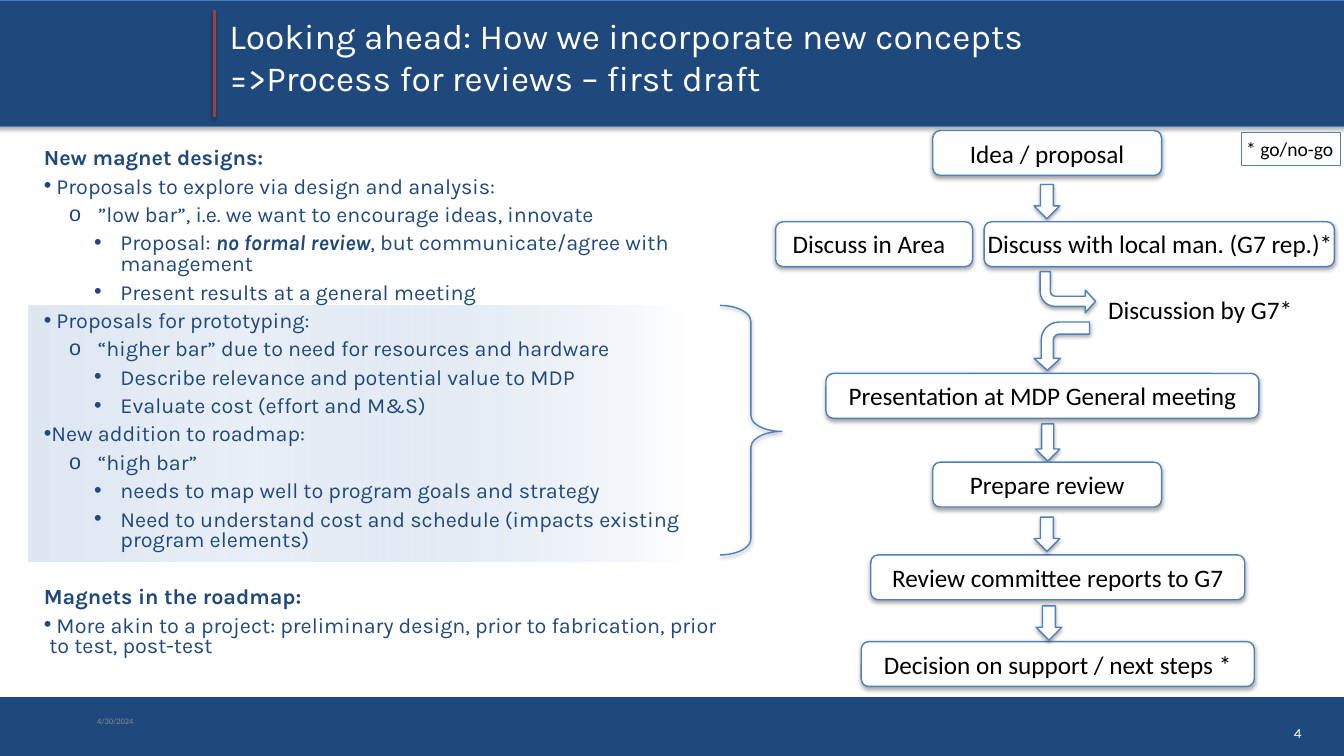
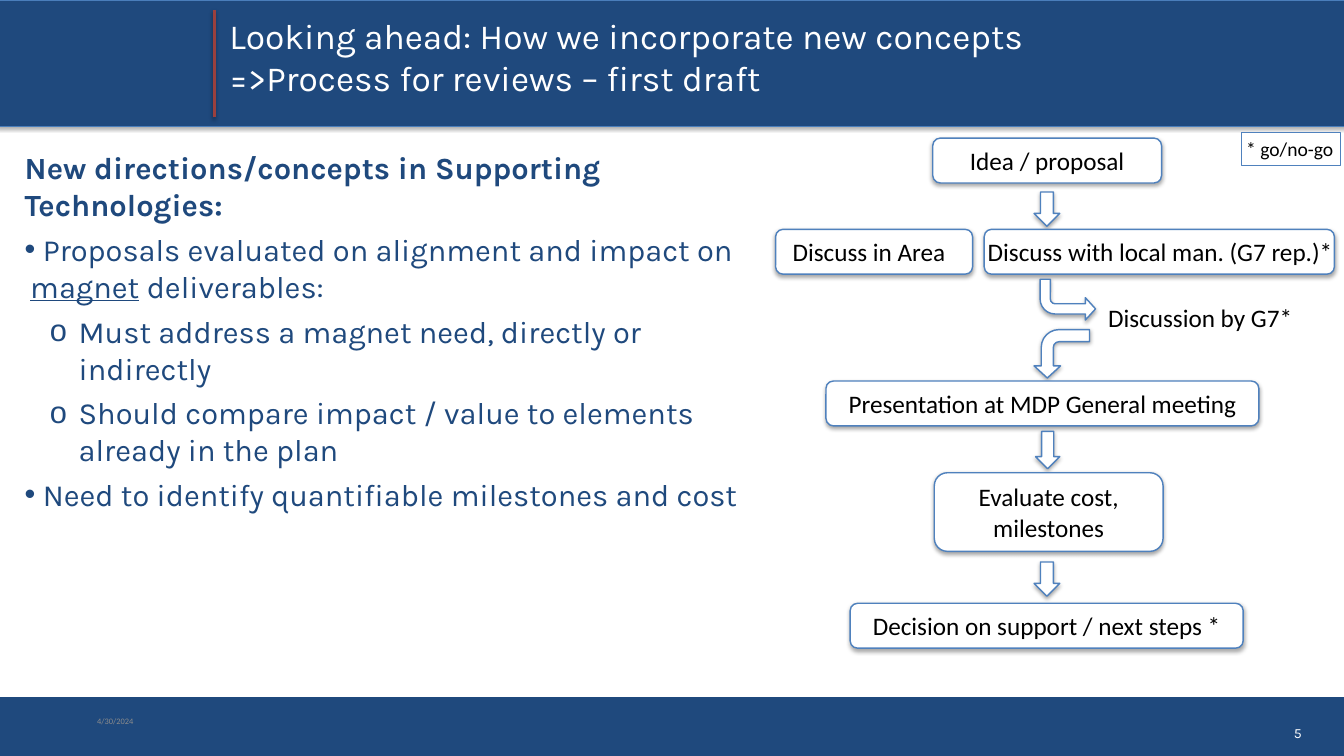
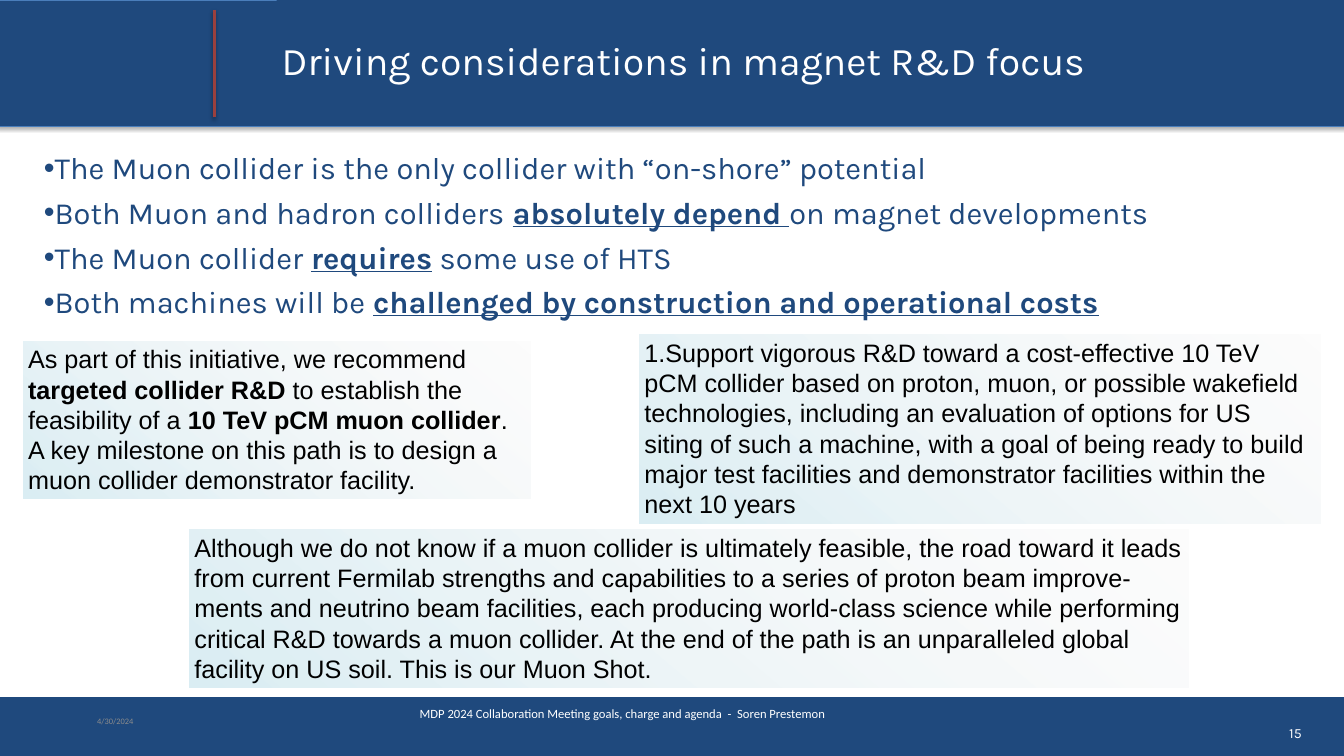
from dataclasses import dataclass
from typing import NamedTuple, Optional

from lxml.etree import SubElement
from pptx import Presentation
from pptx.dml.color import RGBColor
from pptx.enum.shapes import MSO_CONNECTOR, MSO_SHAPE as SHAPE
from pptx.enum.text import MSO_ANCHOR as ANCHOR, MSO_AUTO_SIZE as AUTO_SIZE, PP_ALIGN as ALIGN
from pptx.oxml.ns import qn
from pptx.util import Inches, Pt

NAVY, WHITE, BLACK, GREY = "1F497D", "FFFFFF", "000000", "8C8C8C"
BAND_EDGE, RULE, OUTLINE = "4A7EBB", "9A403E", "4F81BD"
HEAD_FONT, FLOW_FONT, QUOTE_FONT = "Karla", "Calibri", "Arial"
PAD = 0.1
STEP_HEIGHT = 0.89
REVIEW_TITLE = ["Looking ahead: How we incorporate new concepts ",
                "=>Process for reviews – first draft"]


class Box(NamedTuple):
    left: float
    top: float
    width: float
    height: float

    def lengths(self):
        return [Inches(v) for v in self]

    def lower(self, shift: float) -> "Box":
        return self._replace(top=self.top + shift)


class Run(NamedTuple):
    text: str
    bold: bool = False
    italic: bool = False
    underline: bool = False


class Stop(NamedTuple):
    position: int
    color: str
    opacity: int = 100


@dataclass(frozen=True)
class Font:
    name: str
    size: float
    color: str = BLACK


@dataclass(frozen=True)
class Level:
    depth: int = 0
    margin: float = 0
    hanging: float = 0
    bullet: Optional[str] = None


@dataclass(frozen=True)
class Item:
    level: Level
    runs: list
    space_before: float = 11


@dataclass(frozen=True)
class Step:
    text: str
    box: Box


HEADING = Level()
TOPIC = Level(0, 0.11, 0.11, "•")
SUBTOPIC = Level(1, 1.07, 0.57, "o")
DETAIL = Level(2, 1.52, 0.52, "•")

FLOW = Font(FLOW_FONT, 36)
QUOTE = Font(QUOTE_FONT, 36)
HIGHLIGHT_STOPS = [Stop(0, "F6F9FC"), Stop(0, "B0C6E1", 42),
                   Stop(32, "B0C6E1", 27), Stop(93, WHITE)]
QUOTE_STOPS = [Stop(0, "F7F7F7", 32), Stop(100, "DBEEF4")]


def rgb(color: str) -> RGBColor:
    return RGBColor.from_string(color)


def set_effects(s, shadow: int = 0) -> None:
    """Replace the theme shadow by one of the given opacity, or by none."""
    effects = SubElement(s.element.spPr, qn("a:effectLst"))
    if shadow:
        outer = SubElement(effects, qn("a:outerShdw"), blurRad=str(Pt(6)), dist=str(Pt(3)),
                           dir="5400000", rotWithShape="0")
        black = SubElement(outer, qn("a:srgbClr"), val=BLACK)
        SubElement(black, qn("a:alpha"), val=str(shadow * 1000))


def set_gradient(s, stops: list, angle: int) -> None:
    s.fill.gradient()
    s.fill.gradient_angle = -angle % 360
    stop_list = s.element.spPr.find(qn("a:gradFill")).find(qn("a:gsLst"))
    for old in list(stop_list):
        stop_list.remove(old)
    for stop in stops:
        gs = SubElement(stop_list, qn("a:gs"), pos=str(stop.position * 1000))
        color = SubElement(gs, qn("a:srgbClr"), val=stop.color)
        if stop.opacity < 100:
            SubElement(color, qn("a:alpha"), val=str(stop.opacity * 1000))


def add_shape(slide, kind, box: Box, fill: Optional[str] = WHITE, line: Optional[str] = OUTLINE,
              weight: float = 2, shadow: int = 35, adjust=()):
    s = slide.shapes.add_shape(kind, *box.lengths())
    for i, value in enumerate(adjust):
        s.adjustments[i] = value
    if fill:
        s.fill.solid()
        s.fill.fore_color.rgb = rgb(fill)
    else:
        s.fill.background()
    if line:
        s.line.color.rgb = rgb(line)
        s.line.width = Pt(weight)
    else:
        s.line.fill.background()
    set_effects(s, shadow)
    return s


def add_gradient_box(slide, box: Box, stops: list, angle: int):
    s = add_shape(slide, SHAPE.RECTANGLE, box, line=None, shadow=0)
    set_gradient(s, stops, angle)
    return s


def add_runs(p, runs: list, font: Font) -> None:
    for run in runs:
        r = p.add_run()
        r.text = run.text
        f = r.font
        f.name, f.size = font.name, Pt(font.size)
        f.color.rgb = rgb(font.color)
        f.bold, f.italic, f.underline = run.bold, run.italic, run.underline


def setup_frame(s, anchor=ANCHOR.TOP, pad: float = PAD, wrap: bool = True):
    """Set padding, anchor and wrapping, and return the text frame."""
    tf = s.text_frame
    tf.word_wrap = wrap
    tf.auto_size = AUTO_SIZE.NONE if wrap else AUTO_SIZE.SHAPE_TO_FIT_TEXT
    tf.vertical_anchor = anchor
    tf.margin_left = tf.margin_right = Inches(PAD)
    tf.margin_top = tf.margin_bottom = Inches(pad)
    return tf


def write(s, runs: list, font: Font, align=ALIGN.LEFT, anchor=ANCHOR.TOP,
          pad: float = PAD, wrap: bool = True):
    p = setup_frame(s, anchor, pad, wrap).paragraphs[0]
    p.alignment = align
    add_runs(p, runs, font)
    return p


def add_label(slide, text: str, box: Box, font: Font = FLOW, **layout) -> None:
    write(slide.shapes.add_textbox(*box.lengths()), [Run(text)], font, **layout)


def place(s, box: Box) -> None:
    s.left, s.top, s.width, s.height = box.lengths()


def set_title(slide, lines: list, box: Box, size: float) -> None:
    s = slide.shapes.title
    place(s, box)
    s.fill.solid()
    s.fill.fore_color.rgb = rgb(NAVY)
    p = setup_frame(s, ANCHOR.MIDDLE).paragraphs[0]
    p.alignment = ALIGN.LEFT
    for i, line in enumerate(lines):
        if i:
            p.add_line_break()
        add_runs(p, [Run(line)], Font(HEAD_FONT, size, WHITE))


def set_level(p, level: Level) -> None:
    p.level = level.depth
    pPr = p._p.get_or_add_pPr()
    pPr.set("marL", str(Inches(level.margin)))
    pPr.set("indent", str(-Inches(level.hanging)))
    if level.bullet:
        SubElement(pPr, qn("a:buChar"), char=level.bullet)
    else:
        SubElement(pPr, qn("a:buNone"))


def set_body(slide, items: list, box: Box, size: float, line_spacing: float = 1.0) -> None:
    s = slide.placeholders[1]
    place(s, box)
    tf = setup_frame(s)
    for i, item in enumerate(items):
        p = tf.add_paragraph() if i else tf.paragraphs[0]
        set_level(p, item.level)
        p.alignment = ALIGN.LEFT
        p.line_spacing = line_spacing
        p.space_before = Pt(item.space_before if i else 0)
        add_runs(p, item.runs, Font(HEAD_FONT, size, NAVY))


def add_bands_to_layout(slide, layout) -> None:
    """Draw the bands and the red rule, then hand them to the layout all slides use."""
    footer = add_shape(slide, SHAPE.RECTANGLE, Box(-0.04, 13.83, 26.74, 1.19), NAVY, None, shadow=0)
    header = add_shape(slide, SHAPE.RECTANGLE, Box(-0.07, 0, 26.79, 2.5), NAVY, BAND_EDGE, 1)
    rule = slide.shapes.add_connector(MSO_CONNECTOR.STRAIGHT, Inches(4.25), Inches(2.33),
                                      Inches(4.25), Inches(0.2))
    rule.line.color.rgb = rgb(RULE)
    rule.line.width = Pt(4)
    set_effects(rule, 38)
    for s in (footer, header, rule):
        layout.shapes.element.append(s.element)


def add_footer(slide, number: int) -> None:
    add_label(slide, "4/30/2024", Box(1.83, 13.9, 6, 0.8), Font(FLOW_FONT, 12, GREY),
              anchor=ANCHOR.MIDDLE)
    add_label(slide, str(number), Box(25.4, 14.28, 0.53, 0.51), Font(HEAD_FONT, 20, WHITE),
              align=ALIGN.RIGHT, anchor=ANCHOR.MIDDLE, wrap=False)


def add_step(slide, step: Step) -> None:
    s = add_shape(slide, SHAPE.ROUNDED_RECTANGLE, step.box)
    write(s, [Run(step.text)], FLOW, ALIGN.CENTER, ANCHOR.MIDDLE)


def add_down_arrow(slide, left: float, top: float, width: float = 0.51, height: float = 0.68) -> None:
    add_shape(slide, SHAPE.DOWN_ARROW, Box(left, top, width, height))


def add_bent_arrow(slide, box: Box, rotation: int) -> None:
    s = add_shape(slide, SHAPE.BENT_ARROW, box, adjust=(0.25, 0.274, 0.25, 0.366))
    s.rotation = rotation
    s.element.spPr.find(qn("a:xfrm")).set("flipH", "1")


def add_flow_start(slide, shift: float = 0) -> None:
    """Draw the steps both review processes begin with, lowered by shift."""
    add_step(slide, Step("Idea / proposal", Box(18.51, 2.59 + shift, 4.54, STEP_HEIGHT)))
    add_down_arrow(slide, 20.52, 3.66 + shift)
    for left, width in ((19.53, 6.95), (15.39, 3.91)):
        add_shape(slide, SHAPE.ROUNDED_RECTANGLE, Box(left, 4.4 + shift, width, STEP_HEIGHT))
    for text, box in (("Discuss with local man. (G7 rep.)*", Box(19.5, 4.43, 7.09, 0.81)),
                      ("Discuss in Area", Box(15.63, 4.43, 3.47, 0.81)),
                      ("Discussion by G7*", Box(21.89, 5.74, 4.39, 0.81))):
        add_label(slide, text, box.lower(shift))
    add_bent_arrow(slide, Box(20.64, 5.39 + shift, 1.1, 0.81), 180)
    add_bent_arrow(slide, Box(20.59, 6.32 + shift, 0.96, 1.1), 270)
    add_step(slide, Step("Presentation at MDP General meeting",
                         Box(16.39, 7.41 + shift, 8.59, STEP_HEIGHT)))
    add_down_arrow(slide, 20.55, 8.41 + shift, 0.48, 0.74)
    legend = add_shape(slide, SHAPE.RECTANGLE, Box(24.63, 2.62, 1.96, 0.67), None,
                       weight=1, shadow=0)
    write(legend, [Run("* go/no-go")], Font(FLOW_FONT, 28), wrap=False)


def build_magnet_review(slide) -> None:
    set_title(slide, REVIEW_TITLE, Box(4.45, 0.13, 21.45, 1.99), 50.4)
    set_body(slide, [
        Item(HEADING, [Run("New magnet designs:", bold=True)]),
        Item(TOPIC, [Run(" Proposals to explore via design and analysis:")]),
        Item(SUBTOPIC, [Run("”low bar”, i.e. we want to encourage ideas, innovate")]),
        Item(DETAIL, [Run("Proposal: "), Run("no formal review", bold=True, italic=True),
                      Run(", but communicate/agree with management")]),
        Item(DETAIL, [Run("Present results at a general meeting")]),
        Item(TOPIC, [Run(" Proposals for prototyping:")]),
        Item(SUBTOPIC, [Run("“higher bar” due to need for resources and hardware")]),
        Item(DETAIL, [Run("Describe relevance and potential value to MDP")]),
        Item(DETAIL, [Run("Evaluate cost (effort and M&S)")]),
        Item(TOPIC, [Run("New addition to roadmap:")]),
        Item(SUBTOPIC, [Run("“high bar”")]),
        Item(DETAIL, [Run("needs to map well to program goals and strategy")]),
        Item(DETAIL, [Run("Need to understand cost and schedule "
                          "(impacts existing program elements)")]),
        Item(HEADING, [Run("Magnets in the roadmap:", bold=True)], space_before=51.5),
        Item(TOPIC, [Run(" More akin to a project: preliminary design, prior to fabrication, "
                         "prior to test, post-test")]),
    ], Box(0.77, 2.86, 13.64, 10.77), 30.8, 0.8)
    highlight = add_gradient_box(slide, Box(0.57, 6.06, 14.05, 5.08), HIGHLIGHT_STOPS, 0)
    slide.shapes.element.insert(2, highlight.element)
    add_flow_start(slide)
    for step in (Step("Prepare review", Box(18.51, 9.17, 4.54, STEP_HEIGHT)),
                 Step("Review committee reports to G7", Box(17.28, 11.01, 7.42, STEP_HEIGHT)),
                 Step("Decision on support / next steps *", Box(17.09, 12.73, 7.8, STEP_HEIGHT))):
        add_step(slide, step)
    add_down_arrow(slide, 20.52, 10.26)
    add_down_arrow(slide, 20.56, 12.02)
    add_shape(slide, SHAPE.RIGHT_BRACE, Box(14.29, 6.06, 1.22, 4.95), None, adjust=(0.262, 0.505))


def build_technology_review(slide) -> None:
    set_title(slide, REVIEW_TITLE, Box(4.45, 0.13, 21.45, 1.99), 50.4)
    set_body(slide, [
        Item(HEADING, [Run("New directions/concepts in Supporting Technologies:", bold=True)]),
        Item(TOPIC, [Run(" Proposals evaluated on alignment and impact on "),
                     Run("magnet", underline=True), Run(" deliverables:")]),
        Item(SUBTOPIC, [Run("Must address a magnet need, directly or indirectly")]),
        Item(SUBTOPIC, [Run("Should compare impact / value to elements already in the plan")]),
        Item(TOPIC, [Run(" Need to identify quantifiable milestones and cost")]),
    ], Box(0.39, 2.86, 14.73, 7.28), 44)
    add_flow_start(slide, shift=0.15)
    add_step(slide, Step("Evaluate cost, milestones", Box(18.54, 9.38, 4.54, 1.56)))
    add_down_arrow(slide, 20.52, 11.15)
    add_step(slide, Step("Decision on support / next steps *",
                         Box(16.87, 11.97, 7.8, STEP_HEIGHT)))


def add_quote(slide, box: Box, runs: list):
    s = add_gradient_box(slide, box, QUOTE_STOPS, 130)
    return write(s, runs, QUOTE, pad=0.05)


def build_considerations(slide) -> None:
    set_title(slide, ["Driving considerations in magnet R&D focus"],
              Box(5.49, -0.03, 21.21, 2.42), 56)
    set_body(slide, [
        Item(TOPIC, [Run("The Muon collider is the only collider with “on-shore” potential")]),
        Item(TOPIC, [Run("Both Muon and hadron colliders "),
                     Run("absolutely depend ", bold=True, underline=True),
                     Run("on magnet developments")]),
        Item(TOPIC, [Run("The Muon collider "), Run("requires", bold=True, underline=True),
                     Run(" some use of HTS")]),
        Item(TOPIC, [Run("Both machines will be "),
                     Run("challenged by construction and operational costs",
                         bold=True, underline=True)]),
    ], Box(0.77, 2.86, 24.36, 9.9), 44)
    add_label(slide, "MDP 2024 Collaboration Meeting goals, charge and agenda  -  Soren Prestemon",
              Box(8.23, 13.9, 15.36, 0.8), Font(FLOW_FONT, 18, WHITE))
    add_quote(slide, Box(0.46, 6.77, 10.07, 3.13), [
        Run("As part of this initiative, we recommend "),
        Run("targeted collider R&D ", bold=True),
        Run("to establish the feasibility of a "),
        Run("10 TeV pCM muon collider", bold=True),
        Run(". A key milestone on this path is to design a muon collider demonstrator facility.")])
    p = add_quote(slide, Box(12.69, 6.64, 13.52, 3.74), [
        Run("Support vigorous R&D toward a cost-effective 10 TeV pCM collider based on proton, "
            "muon, or possible wakefield technologies, including an evaluation of options for US "
            "siting of such a machine, with a goal of being ready to build major test facilities "
            "and demonstrator facilities within the next 10 years")])
    SubElement(p._p.get_or_add_pPr(), qn("a:buAutoNum"), type="arabicPeriod")
    add_quote(slide, Box(3.76, 10.51, 19.82, 3.13), [
        Run("Although we do not know if a muon collider is ultimately feasible, the road toward "
            "it leads from current Fermilab strengths and capabilities to a series of proton beam "
            "improve- ments and neutrino beam facilities, each producing world-class science while "
            "performing critical R&D towards a muon collider. At the end of the path is an "
            "unparalleled global facility on US soil. This is our Muon Shot.")])


def main() -> None:
    prs = Presentation()
    prs.slide_width, prs.slide_height = Inches(26.67), Inches(15)
    layout = prs.slide_layouts[1]
    pages = ((4, build_magnet_review), (5, build_technology_review), (15, build_considerations))
    for number, build in pages:
        slide = prs.slides.add_slide(layout)
        build(slide)
        add_footer(slide, number)
    add_bands_to_layout(prs.slides[0], layout)
    prs.save("out.pptx")


if __name__ == "__main__":
    main()
